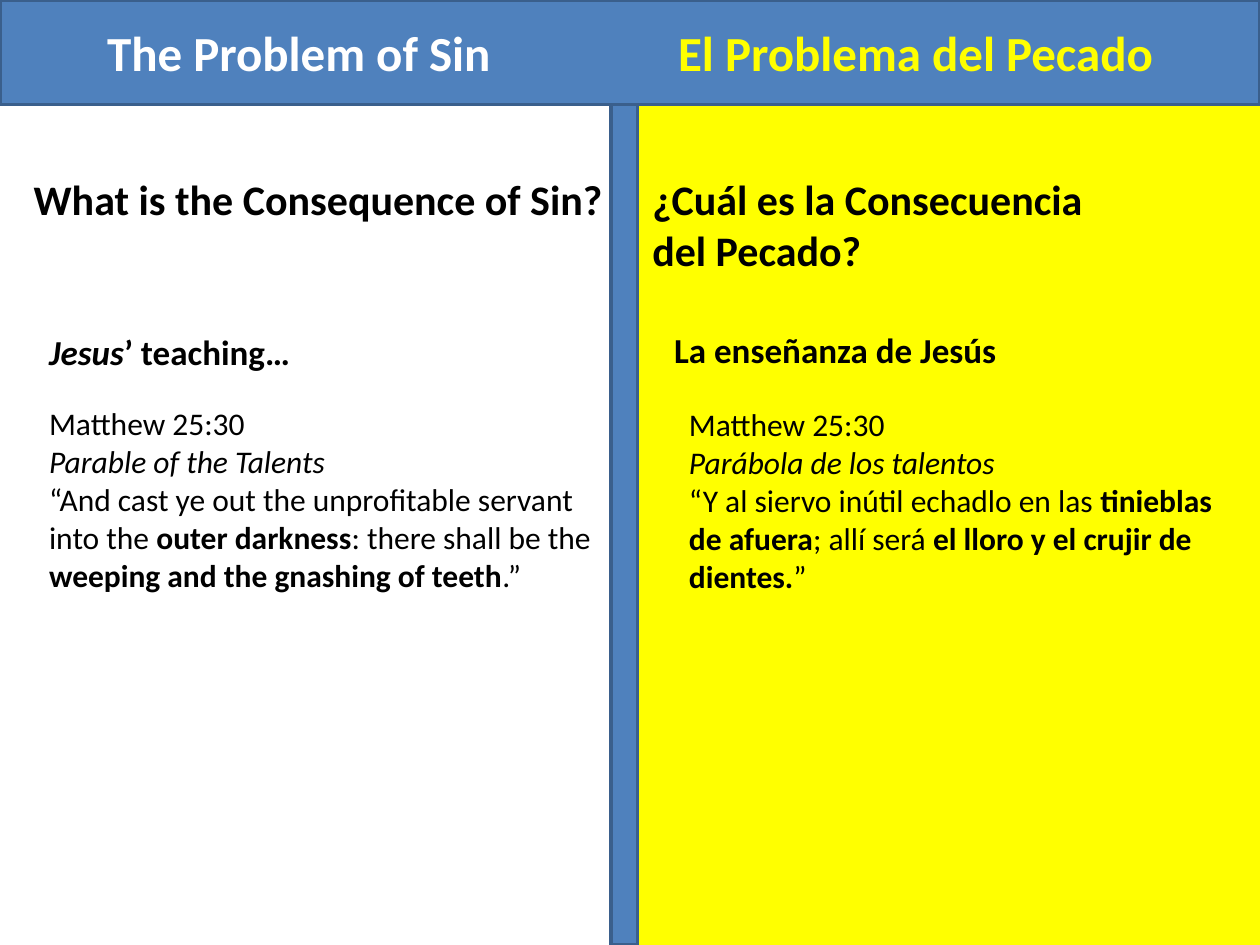
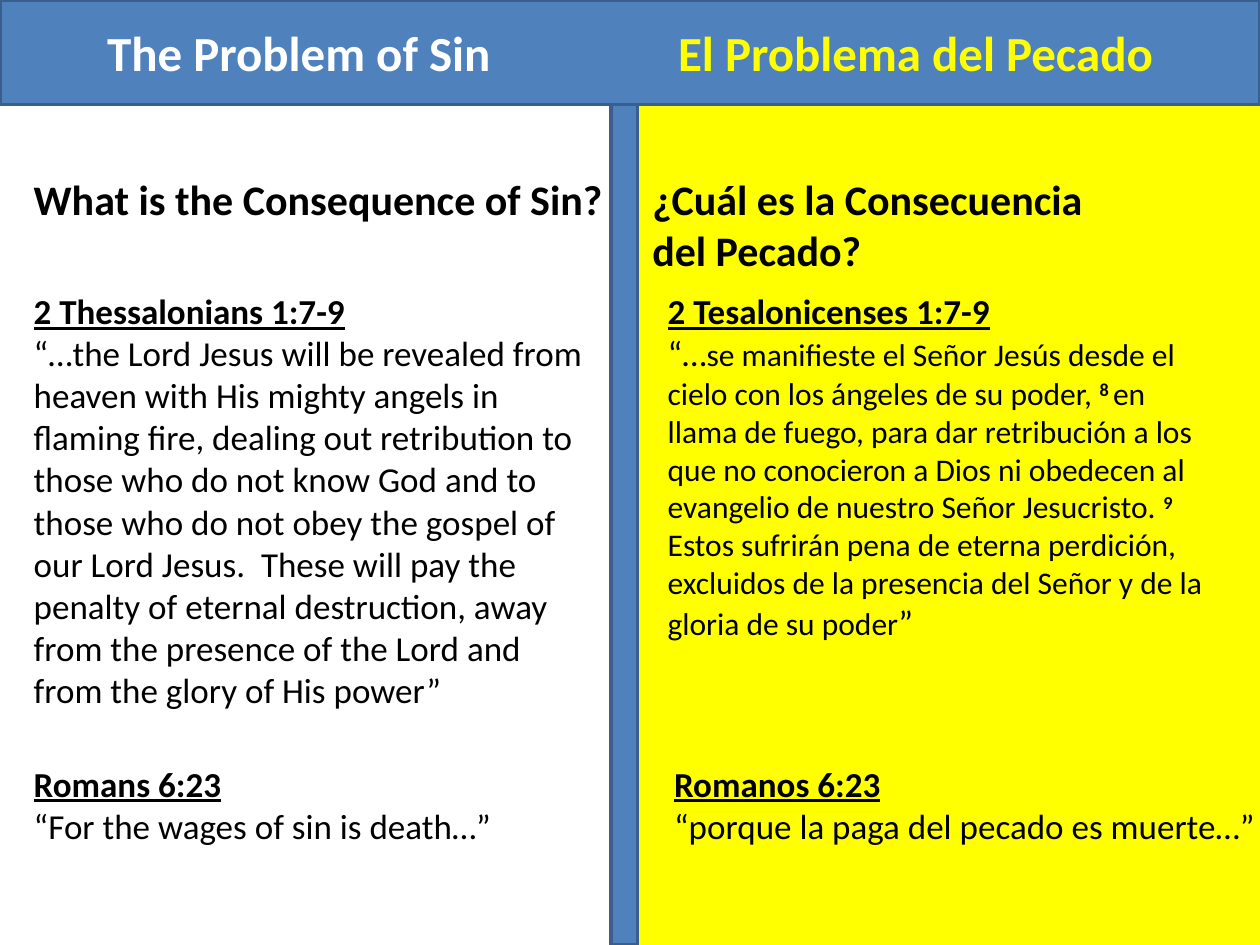
from pptx import Presentation
from pptx.dml.color import RGBColor
from pptx.enum.shapes import MSO_SHAPE
from pptx.enum.text import MSO_ANCHOR, MSO_AUTO_SIZE, PP_ALIGN
from pptx.oxml import parse_xml
from pptx.oxml.ns import nsdecls
from pptx.util import Cm, Pt

FONT = "Calibri"
BLACK, WHITE, YELLOW, BLUE, NAVY = "000000", "FFFFFF", "FFFF00", "4F81BD", "3A5F8C"
PAGE_WIDTH, PAGE_HEIGHT = 25.4, 19.05
HALF = PAGE_WIDTH / 2
BAND_HEIGHT = 2.11
DIVIDER_LEFT, DIVIDER_WIDTH = 12.32, 0.53
TITLE_INSET, TITLE_TAB = 2.16, 11.51
COLUMN_WIDTH = 11.56
SMALL = 18

TITLES = [("The Problem of Sin\t", WHITE), ("El Problema del Pecado", YELLOW)]

# styles: b bold, i italic, u underlined, s small, ^ superscript
QUESTIONS = [
    ((0.43, 3.38, 22.23, 1.27), True, 24, [[("What is the Consequence of Sin?", "b")]]),
    ((12.9, 3.38, 9.27, 2.31), False, 24, [
        [("¿Cuál es la Consecuencia", "b")],
        [("del Pecado?", "b")],
    ]),
]

TEACHING = [
    ((0.74, 6.53, 5.41, 1.12), False, 20, [[("Jesus", "bi"), ("’ teaching…", "b")]]),
    ((13.34, 6.5, 7.09, 1.12), False, 20, [[("La enseñanza de Jesús", "b")]]),
    ((0.74, 8.03, COLUMN_WIDTH, 4.11), True, 18, [
        [("Matthew 25:30", "")],
        [("Parable of the Talents", "i")],
        [("“And cast ye out the unprofitable servant into the ", ""),
         ("outer darkness", "b"),
         (": there shall be the ", ""),
         ("weeping and the gnashing of teeth", "b"),
         (".”", "")],
    ]),
    ((13.64, 8.05, COLUMN_WIDTH, 4.11), True, 18, [
        [("Matthew 25:30", "")],
        [("Parábola de los talentos", "i")],
        [("“Y al siervo inútil echadlo en las ", ""),
         ("tinieblas de afuera", "b"),
         ("; allí será ", ""),
         ("el lloro y el crujir de dientes.", "b"),
         ("”", "")],
    ]),
]

EPISTLES = [
    ((0.43, 5.72, COLUMN_WIDTH, 8.81), True, 20, [
        [("2 Thessalonians 1:7-9", "bu")],
        [("“…the Lord Jesus will be revealed from heaven with His mighty angels in "
          "flaming fire, dealing out retribution to those who do not know God and to "
          "those who do not obey the gospel of our Lord Jesus.  These will pay the "
          "penalty of eternal destruction, away from the presence of the Lord and "
          "from the glory of His power”", "")],
    ]),
    ((13.21, 5.72, COLUMN_WIDTH, 7.44), True, 20, [
        [("2 Tesalonicenses 1:7-9", "bu")],
        [("“…", ""),
         ("se manifieste el Señor Jesús desde el cielo con los ángeles de su poder, ", "s"),
         ("8 ", "bs^"),
         ("en llama de fuego, para dar retribución a los que no conocieron a Dios ni "
          "obedecen al evangelio de nuestro Señor Jesucristo. ", "s"),
         ("9 ", "bs^"),
         ("Estos sufrirán pena de eterna perdición, excluidos de la presencia del "
          "Señor y de la gloria de su poder", "s"),
         ("”", "")],
    ]),
    ((0.43, 15.24, 9.83, 1.96), False, 20, [
        [("Romans 6:23", "bu")],
        [("“For the wages of sin is death…”", "")],
    ]),
    ((13.34, 15.24, 12.32, 1.96), False, 20, [
        [("Romanos 6:23", "bu")],
        [("“porque la paga del pecado es muerte…”", "")],
    ]),
]

SLIDES = [TEACHING, EPISTLES]


def color(hex_code):
    return RGBColor.from_string(hex_code)


def add_block(slide, place, fill, outline=None):
    block = slide.shapes.add_shape(MSO_SHAPE.RECTANGLE, *map(Cm, place))
    block.shadow.inherit = False
    block.fill.solid()
    block.fill.fore_color.rgb = color(fill)
    if outline:
        block.line.color.rgb = color(outline)
        block.line.width = Pt(2)
    else:
        block.line.fill.background()
    return block


def apply_style(font, style):
    if "b" in style:
        font.bold = True
    if "i" in style:
        font.italic = True
    if "u" in style:
        font.underline = True
    if "s" in style:
        font.size = Pt(SMALL)
    if "^" in style:
        font._element.set("baseline", "30000")


def add_passage(slide, place, wrap, size, paragraphs):
    frame = slide.shapes.add_textbox(*map(Cm, place)).text_frame
    frame.word_wrap = wrap
    frame.auto_size = MSO_AUTO_SIZE.SHAPE_TO_FIT_TEXT
    for index, runs in enumerate(paragraphs):
        paragraph = frame.add_paragraph() if index else frame.paragraphs[0]
        paragraph.font.name = FONT
        paragraph.font.size = Pt(size)
        paragraph.font.color.rgb = color(BLACK)
        shared = set.intersection(*(set(style) for _, style in runs))
        apply_style(paragraph.font, shared)
        for text, style in runs:
            run = paragraph.add_run()
            run.text = text
            apply_style(run.font, set(style) - shared)


def add_title_band(slide):
    band = add_block(slide, (0, 0, PAGE_WIDTH, BAND_HEIGHT), BLUE, NAVY)
    frame = band.text_frame
    frame.vertical_anchor = MSO_ANCHOR.MIDDLE
    frame.margin_left = Cm(TITLE_INSET)
    title = frame.paragraphs[0]
    title.alignment = PP_ALIGN.LEFT
    title.font.name = FONT
    title.font.size = Pt(28)
    title.font.bold = True
    title._p.get_or_add_pPr().insert(0, parse_xml(
        f'<a:tabLst {nsdecls("a")}><a:tab pos="{Cm(TITLE_TAB)}" algn="l"/></a:tabLst>'))
    for text, ink in TITLES:
        run = title.add_run()
        run.text = text
        run.font.color.rgb = color(ink)


def build_slide(deck, passages):
    slide = deck.slides.add_slide(deck.slide_layouts[6])
    add_block(slide, (HALF, 0, HALF, PAGE_HEIGHT), YELLOW)
    add_block(slide, (DIVIDER_LEFT, 0, DIVIDER_WIDTH, PAGE_HEIGHT), BLUE, NAVY)
    add_title_band(slide)
    for passage in QUESTIONS + passages:
        add_passage(slide, *passage)


def main():
    deck = Presentation()
    deck.slide_width, deck.slide_height = Cm(PAGE_WIDTH), Cm(PAGE_HEIGHT)
    for passages in SLIDES:
        build_slide(deck, passages)
    deck.save("out.pptx")


if __name__ == "__main__":
    main()
